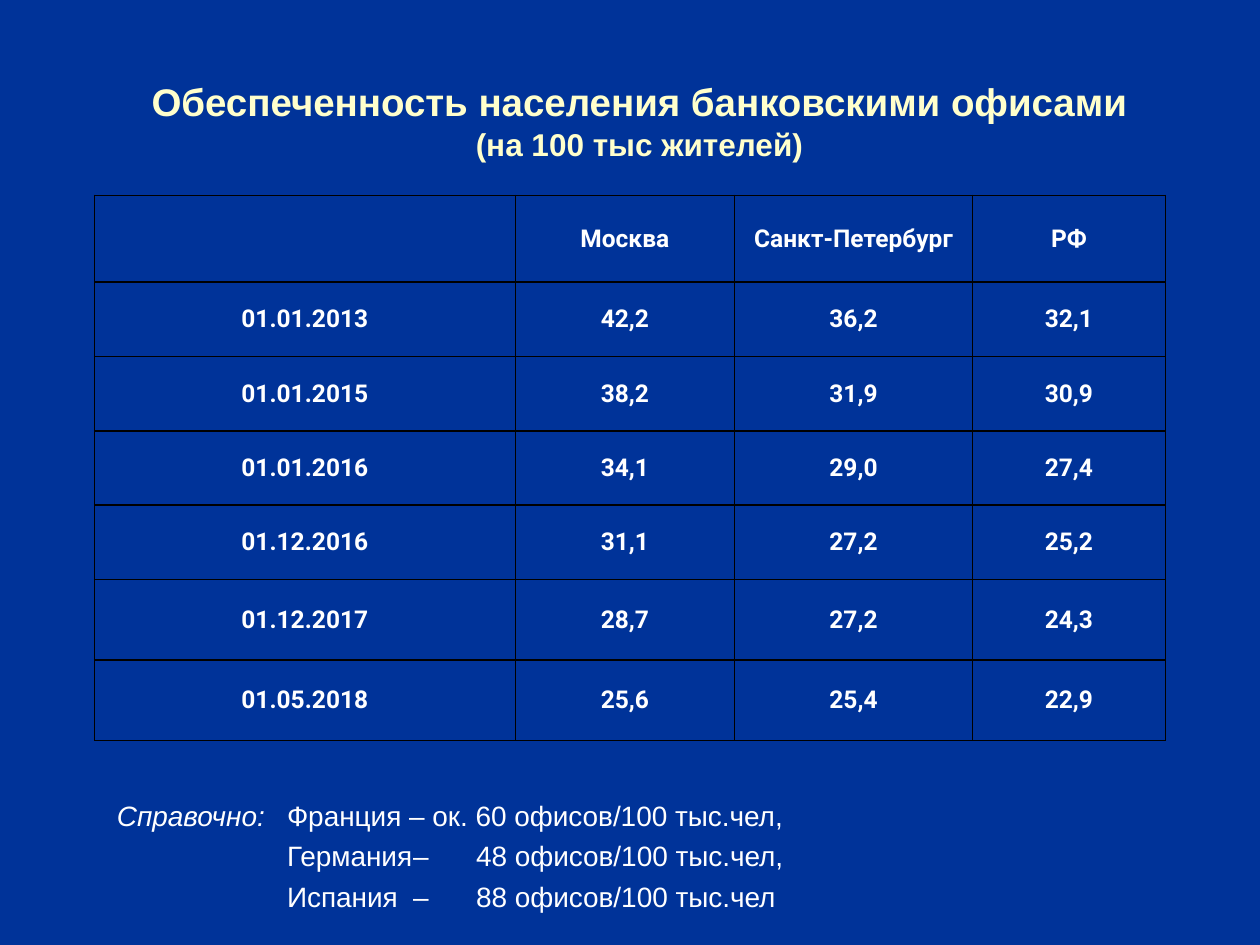
from lxml.etree import SubElement
from pptx import Presentation
from pptx.dml.color import RGBColor
from pptx.enum.text import MSO_ANCHOR as Anchor, PP_ALIGN as Align
from pptx.oxml import parse_xml
from pptx.oxml.ns import nsdecls, qn
from pptx.util import Inches, Pt

BACKGROUND, CREAM, WHITE, BLACK = "003399", "FFFFCC", "FFFFFF", "000000"

TITLE = [("Обеспеченность населения банковскими офисами", 22),
         ("(на 100 тыс жителей)", 18)]
OFFICES = [
    ("", "Москва", "Санкт-Петербург", "РФ"),
    ("01.01.2013", "42,2", "36,2", "32,1"),
    ("01.01.2015", "38,2", "31,9", "30,9"),
    ("01.01.2016", "34,1", "29,0", "27,4"),
    ("01.12.2016", "31,1", "27,2", "25,2"),
    ("01.12.2017", "28,7", "27,2", "24,3"),
    ("01.05.2018", "25,6", "25,4", "22,9"),
]
COLUMN_WIDTHS = [3.34, 1.74, 1.89, 1.53]
ROW_HEIGHTS = [0.69] + [0.59] * 4 + [0.64] * 2
REFERENCE_LABEL = "Справочно:"
REFERENCE = [
    REFERENCE_LABEL + "\tФранция – ок. 60 офисов/100 тыс.чел,",
    "Германия\t–\t48 офисов/100 тыс.чел,",
    "Испания\t–\t88 офисов/100 тыс.чел",
]
COUNTRY_INDENT, DASH_TAB, NUMBER_TAB = 1.35, 2.4, 2.65


def color(value):
    return RGBColor.from_string(value)


def style(run, size, value, name="Arial", bold=False, italic=False):
    font = run.font
    font.size, font.name = Pt(size), name
    font.bold, font.italic = bold, italic
    font.color.rgb = color(value)


def add_text_box(slide, left, top, width, height, anchor):
    frame = slide.shapes.add_textbox(
        Inches(left), Inches(top), Inches(width), Inches(height)).text_frame
    frame.word_wrap = True
    frame.vertical_anchor = anchor
    return frame


def add_title(slide):
    frame = add_text_box(slide, 0.59, 0.76, 8.97, 0.39, Anchor.MIDDLE)
    frame.text = "\v".join(line for line, _ in TITLE)
    paragraph = frame.paragraphs[0]
    paragraph.alignment = Align.CENTER
    for run, (_, size) in zip(paragraph.runs, TITLE):
        style(run, size, CREAM, bold=True)


def add_borders(cell):
    properties = cell._tc.get_or_add_tcPr()
    for position, side in enumerate("LRTB"):
        properties.insert(position, parse_xml(
            f'<a:ln{side} {nsdecls("a")} w="{Pt(1)}"><a:solidFill>'
            f'<a:srgbClr val="{BLACK}"/></a:solidFill></a:ln{side}>'))


def add_office_table(slide):
    table = slide.shapes.add_table(
        len(OFFICES), len(COLUMN_WIDTHS), Inches(0.75), Inches(1.55),
        Inches(sum(COLUMN_WIDTHS)), Inches(sum(ROW_HEIGHTS))).table
    table.first_row = table.horz_banding = False
    for column, width in zip(table.columns, COLUMN_WIDTHS):
        column.width = Inches(width)
    for row, height, values in zip(table.rows, ROW_HEIGHTS, OFFICES):
        row.height = Inches(height)
        for cell, value in zip(row.cells, values):
            cell.fill.background()
            add_borders(cell)
            cell.vertical_anchor = Anchor.MIDDLE
            paragraph = cell.text_frame.paragraphs[0]
            paragraph.text = value
            paragraph.alignment = Align.CENTER
            for run in paragraph.runs:
                style(run, 14, WHITE, "Roboto", bold=True)


def add_reference(slide):
    frame = add_text_box(slide, 0.83, 6.29, 6.54, 1.01, Anchor.TOP)
    frame.text = "\n".join(REFERENCE)
    for number, paragraph in enumerate(frame.paragraphs):
        properties = paragraph._p.get_or_add_pPr()
        properties.set("marL", str(Inches(COUNTRY_INDENT)))
        properties.set("indent", str(0 if number else -Inches(COUNTRY_INDENT)))
        tabs = SubElement(properties, qn("a:tabLst"))
        for stop in (COUNTRY_INDENT, DASH_TAB, NUMBER_TAB):
            SubElement(tabs, qn("a:tab"), pos=str(Inches(stop)), algn="l")
        if number:
            paragraph.space_before = Pt(3.8)
    first = frame.paragraphs[0]
    label, rest = first.runs[0], first.add_run()
    rest.text = label.text[len(REFERENCE_LABEL):]
    label.text = REFERENCE_LABEL
    for paragraph in frame.paragraphs:
        for run in paragraph.runs:
            style(run, 16, WHITE, italic=run.text == REFERENCE_LABEL)


def main():
    presentation = Presentation()
    presentation.slide_width, presentation.slide_height = Inches(10), Inches(7.5)
    slide = presentation.slides.add_slide(presentation.slide_layouts[6])
    slide.background.fill.solid()
    slide.background.fill.fore_color.rgb = color(BACKGROUND)
    add_title(slide)
    add_reference(slide)
    add_office_table(slide)
    presentation.save("out.pptx")


if __name__ == "__main__":
    main()
